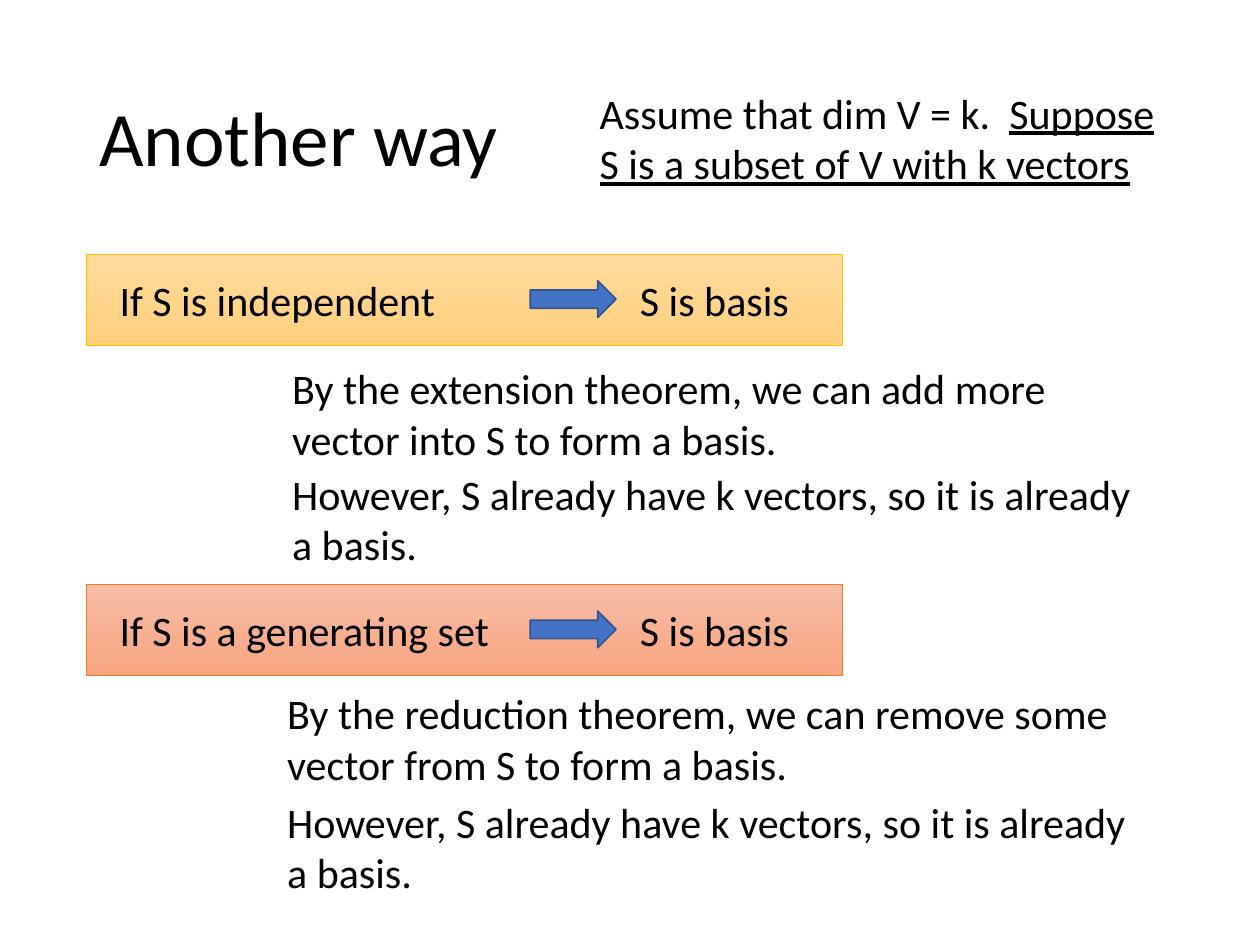
from pptx import Presentation
from pptx.dml.color import RGBColor
from pptx.enum.shapes import MSO_SHAPE
from pptx.enum.text import MSO_ANCHOR
from pptx.util import Cm, Pt

RECT, ARROW = MSO_SHAPE.RECTANGLE, MSO_SHAPE.RIGHT_ARROW
TOP, MIDDLE = MSO_ANCHOR.TOP, MSO_ANCHOR.MIDDLE

TITLE = "Another way"
ASSUMPTION = [("Assume that dim V = k.  ", False),
              ("Suppose S is a subset of V with k vectors", True)]
CONCLUSION = "S is basis"
CLOSING = "However, S already have k vectors, so it is already a basis."
CASES = [
    dict(top=5.13, premise="If S is independent", premise_width=6.93,
         gradient=("FFDB9E", "FFD07C"), line="FFC000", proof_left=5.64,
         proof=[(7.19, "By the extension theorem, we can add more "
                       "vector into S to form a basis."),
                (9.32, CLOSING)]),
    dict(top=11.79, premise="If S is a generating set", premise_width=8.13,
         gradient=("F7BDA5", "F8A582"), line="ED7D31", proof_left=5.54,
         proof=[(13.74, "By the reduction theorem, we can remove some "
                        "vector from S to form a basis."),
                (15.93, CLOSING)]),
]


def rgb(hex_color):
    return RGBColor.from_string(hex_color)


def add_text(shapes, text, left, top, width, height, size=24, anchor=TOP, spacing=1.0):
    """Add a text box; text is a string or a list of (string, underlined)."""
    tb = shapes.add_textbox(Cm(left), Cm(top), Cm(width), Cm(height))
    tf = tb.text_frame
    tf.word_wrap = True
    tf.vertical_anchor = anchor
    p = tf.paragraphs[0]
    p.line_spacing = spacing
    for part, underlined in [(text, False)] if isinstance(text, str) else text:
        r = p.add_run()
        r.text = part
        r.font.name = "Calibri"
        r.font.size = Pt(size)
        r.font.color.rgb = rgb("000000")
        if underlined:
            r.font.underline = True


def add_shape(shapes, kind, left, top, width, height, fill, line, line_width):
    """Add a shape; fill is one colour or a (top, bottom) gradient."""
    sp = shapes.add_shape(kind, Cm(left), Cm(top), Cm(width), Cm(height))
    sp.shadow.inherit = False
    if isinstance(fill, str):
        sp.fill.solid()
        sp.fill.fore_color.rgb = rgb(fill)
    else:
        sp.fill.gradient()
        sp.fill.gradient_angle = 270
        for stop, color in zip(sp.fill.gradient_stops, fill):
            stop.color.rgb = rgb(color)
    sp.line.color.rgb = rgb(line)
    sp.line.width = Pt(line_width)


def add_case(s, case):
    top = case["top"]
    group = s.shapes.add_group_shape().shapes
    add_shape(group, RECT, 1.75, top, 15.24, 1.83, case["gradient"], case["line"], 0.5)
    add_text(group, case["premise"], 2.16, top + 0.28, case["premise_width"], 1.27)
    add_text(group, CONCLUSION, 12.65, top + 0.28, 3.91, 1.27)
    add_shape(group, ARROW, 10.69, top + 0.53, 1.73, 0.74, "4472C4", "325491", 1)
    for proof_top, text in case["proof"]:
        add_text(s.shapes, text, case["proof_left"], proof_top, 17.55, 2.31)


def main():
    prs = Presentation()
    prs.slide_width, prs.slide_height = Cm(25.4), Cm(19.05)
    s = prs.slides.add_slide(prs.slide_layouts[6])
    add_text(s.shapes, TITLE, 1.75, 1.02, 21.9, 3.68, size=44, anchor=MIDDLE, spacing=0.9)
    add_text(s.shapes, ASSUMPTION, 11.84, 1.63, 12.22, 2.31)
    for case in CASES:
        add_case(s, case)
    prs.save("out.pptx")


if __name__ == "__main__":
    main()
